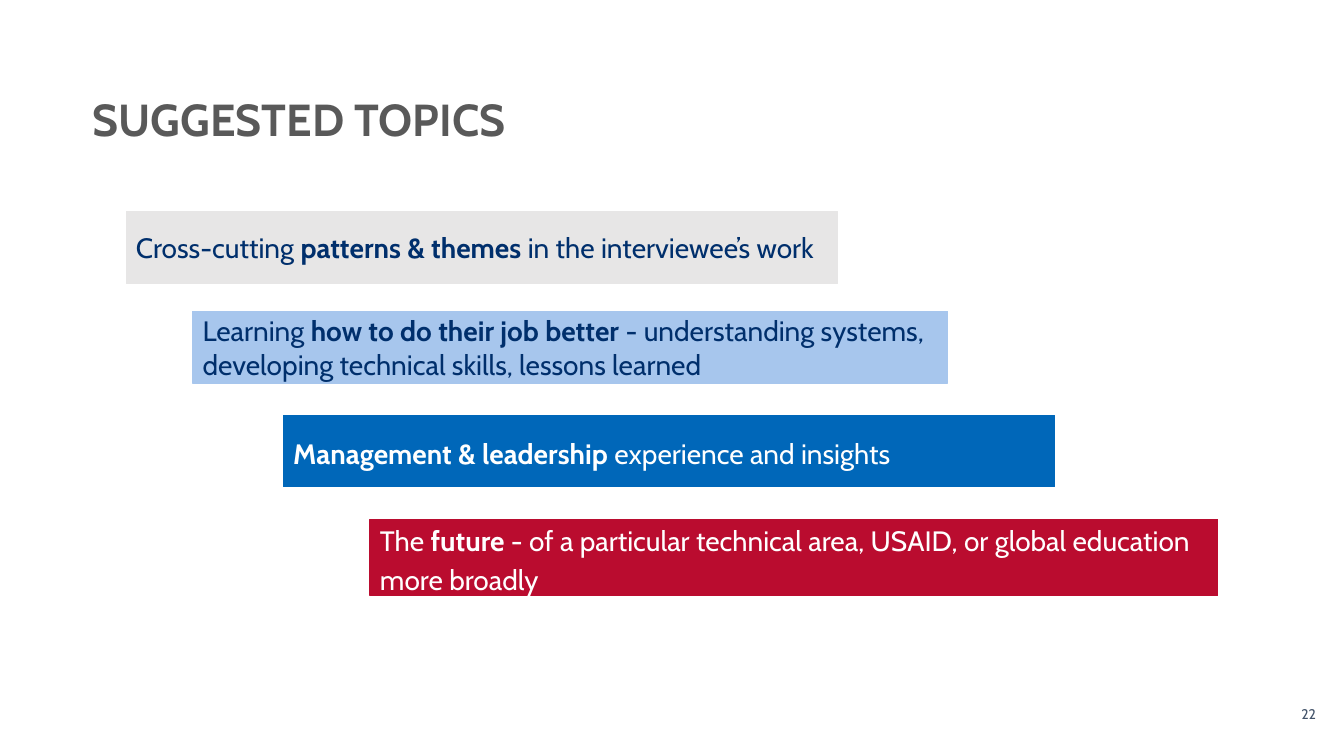
"""Builds the Suggested Topics slide with its staircase of topic bars."""
from dataclasses import dataclass

from pptx import Presentation
from pptx.dml.color import RGBColor
from pptx.enum.shapes import MSO_SHAPE
from pptx.enum.text import MSO_ANCHOR, PP_ALIGN
from pptx.util import Inches, Pt

WIDTH, HEIGHT = Inches(13.33), Inches(7.5)
FONT = "Cabin"
COLORS = {
    "title": "595959",
    "number": "44546A",
    "navy": "002F6C",
    "white": "FFFFFF",
    "gray": "E7E6E6",
    "light_blue": "A7C6ED",
    "blue": "0067B9",
    "red": "BA0C2F",
}


@dataclass(frozen=True)
class Area:
    left: float
    top: float
    width: float
    height: float

    def lengths(self) -> tuple[int, int, int, int]:
        return (
            int(WIDTH * self.left / 100),
            int(HEIGHT * self.top / 100),
            int(WIDTH * self.width / 100),
            int(HEIGHT * self.height / 100),
        )


@dataclass(frozen=True)
class Label:
    area: Area
    text: str
    size: int
    color: str
    bold: bool
    anchor: MSO_ANCHOR
    align: PP_ALIGN
    left_inset: float
    line_spacing: float


@dataclass(frozen=True)
class TopicBar:
    area: Area
    fill: str
    color: str
    before: str
    strong: str
    after: str
    line_spacing: float = 1.0


LABELS = [
    Label(Area(6.9, 5.33, 61.97, 14.67), "SUGGESTED TOPICS", 32, "title", True,
          MSO_ANCHOR.BOTTOM, PP_ALIGN.LEFT, 0, 0.9),
    Label(Area(92.65, 90.67, 6, 7.6), "22", 10, "number", False,
          MSO_ANCHOR.MIDDLE, PP_ALIGN.RIGHT, 0.1, 1.0),
]

TOPIC_BARS = [
    TopicBar(Area(9.38, 28, 52.96, 9.47), "gray", "navy",
             "Cross-cutting", " patterns & themes", " in the interviewee’s work"),
    TopicBar(Area(14.33, 41.2, 56.19, 9.47), "light_blue", "navy",
             "Learning ", "how to do their job better",
             " - understanding systems, developing technical skills, lessons learned"),
    TopicBar(Area(21.08, 54.93, 57.39, 9.47), "blue", "white",
             "", "Management & leadership ", "experience and insights", 1.15),
    TopicBar(Area(27.53, 68.67, 63.09, 10.13), "red", "white",
             "The ", "future",
             " - of a particular technical area, USAID, or global education more broadly",
             1.15),
]


def rgb(name: str) -> RGBColor:
    return RGBColor.from_string(COLORS[name])


def style_paragraph(paragraph, size: int, color: str, align: PP_ALIGN, spacing: float) -> None:
    paragraph.alignment = align
    paragraph.line_spacing = spacing
    paragraph.font.name = FONT
    paragraph.font.size = Pt(size)
    paragraph.font.color.rgb = rgb(color)


def add_label(slide, label: Label) -> None:
    frame = slide.shapes.add_textbox(*label.area.lengths()).text_frame
    frame.word_wrap = True
    frame.vertical_anchor = label.anchor
    frame.margin_left = Inches(label.left_inset)
    paragraph = frame.paragraphs[0]
    paragraph.text = label.text
    style_paragraph(paragraph, label.size, label.color, label.align, label.line_spacing)
    paragraph.font.bold = label.bold


def add_topic_bar(slide, bar: TopicBar) -> None:
    shape = slide.shapes.add_shape(MSO_SHAPE.RECTANGLE, *bar.area.lengths())
    shape.shadow.inherit = False
    shape.fill.solid()
    shape.fill.fore_color.rgb = rgb(bar.fill)
    shape.line.color.rgb = rgb(bar.fill)
    shape.line.width = Pt(0.75)
    frame = shape.text_frame
    frame.word_wrap = True
    frame.vertical_anchor = MSO_ANCHOR.MIDDLE
    frame.margin_left = frame.margin_right = Inches(0.1)
    frame.margin_top = frame.margin_bottom = Inches(0.1)
    paragraph = frame.paragraphs[0]
    style_paragraph(paragraph, 20, bar.color, PP_ALIGN.LEFT, bar.line_spacing)
    for text, bold in ((bar.before, False), (bar.strong, True), (bar.after, False)):
        if text:
            run = paragraph.add_run()
            run.text = text
            run.font.bold = bold


def main() -> None:
    presentation = Presentation()
    presentation.slide_width, presentation.slide_height = WIDTH, HEIGHT
    slide = presentation.slides.add_slide(presentation.slide_layouts[6])
    for label in LABELS:
        add_label(slide, label)
    for bar in TOPIC_BARS:
        add_topic_bar(slide, bar)
    presentation.save("out.pptx")


if __name__ == "__main__":
    main()
